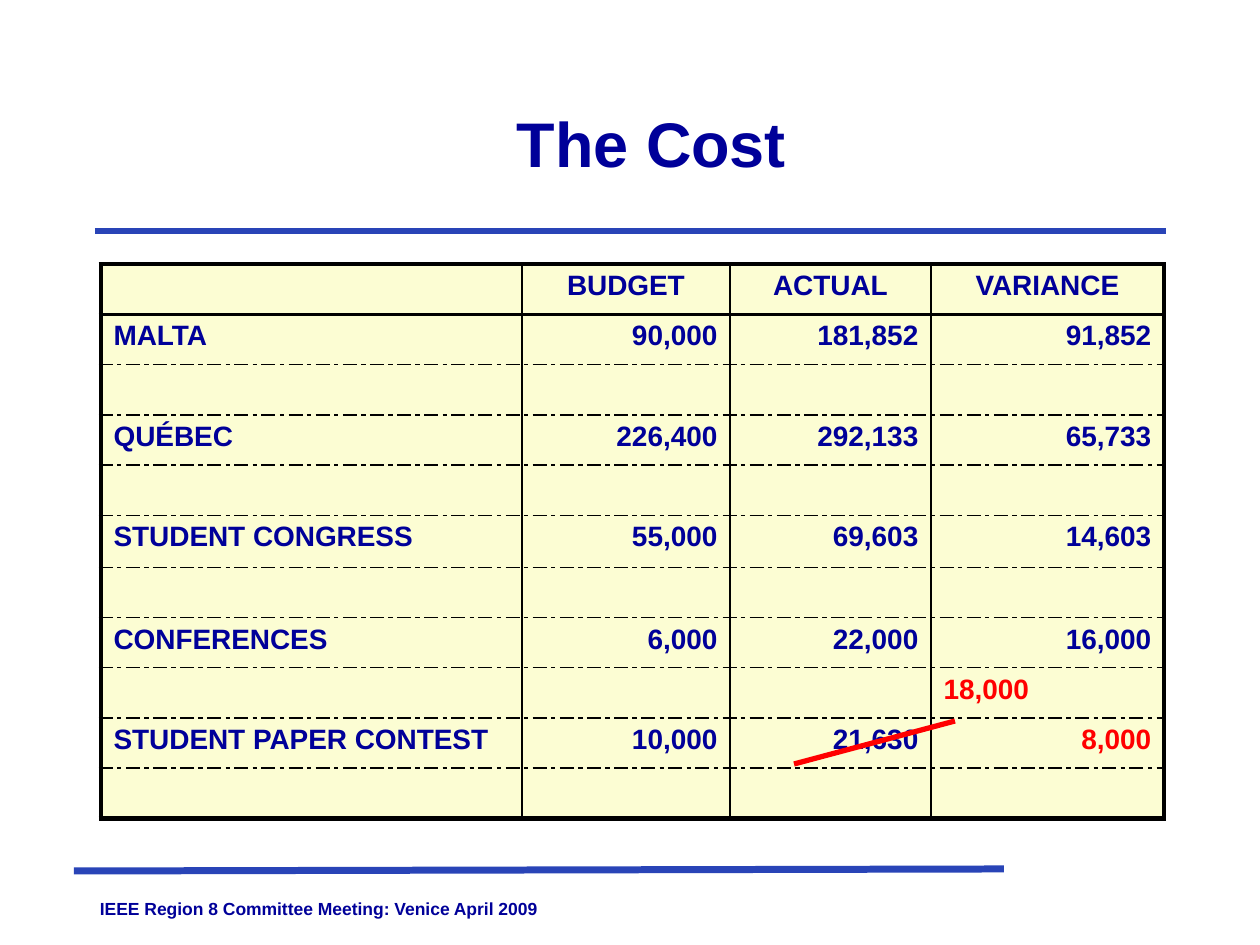
"""Build the cost slide: budget, actual and variance for each activity."""
import pptx
import pptx.util
import pptx.dml.color
import pptx.enum.shapes
import pptx.enum.text
import pptx.oxml
import pptx.oxml.ns

SCALE = 914400 / 126
COLORS = {"navy": "000099", "rule": "2944B7", "cream": "FCFDD3", "red": "FF0000", "black": "000000"}
ALIGN = pptx.enum.text.PP_ALIGN
MIDDLE = pptx.enum.text.MSO_ANCHOR.MIDDLE


def px(*lengths):
    return [pptx.util.Emu(round(length * SCALE)) for length in lengths]


def write(frame, text, size, align, color="navy"):
    paragraph = frame.paragraphs[0]
    paragraph.alignment = align
    run = paragraph.add_run()
    run.text = text
    for name, value in {"name": "Arial", "size": pptx.util.Pt(size), "bold": True}.items():
        setattr(run.font, name, value)
    run.font.color.rgb = pptx.dml.color.RGBColor.from_string(COLORS[color])


deck = pptx.Presentation()
deck.slide_width, deck.slide_height = px(1260, 945)
slide = deck.slides.add_slide(deck.slide_layouts[5])

title = slide.shapes.title
footer = slide.shapes.add_textbox(*px(25, 872, 587, 73))
for name, value in zip(("left", "top", "width", "height"), px(116, 63, 1071, 158)):
    setattr(title, name, value)
for part, text, size in (
    (title, "The Cost", 36),
    (footer, "IEEE Region 8 Committee Meeting: Venice April 2009", 10),
):
    part.text_frame.word_wrap = True
    part.text_frame.vertical_anchor = MIDDLE
    write(part.text_frame, text, size, ALIGN.CENTER)

costs = [
    ["", "BUDGET", "ACTUAL", "VARIANCE"],
    ["MALTA", "90,000", "181,852", "91,852"],
    [""] * 4,
    ["QUÉBEC", "226,400", "292,133", "65,733"],
    [""] * 4,
    ["STUDENT CONGRESS", "55,000", "69,603", "14,603"],
    [""] * 4,
    ["CONFERENCES", "6,000", "22,000", "16,000"],
    ["", "", "", "18,000"],
    ["STUDENT PAPER CONTEST", "10,000", "21,630", "8,000"],
    [""] * 4,
]
widths = [421, 208, 201, 233]
heights = [50] * 5 + [52] + [50] * 5
last_row, last_column = len(heights) - 1, len(widths) - 1
cost_table = slide.shapes.add_table(
    len(heights), len(widths), *px(101, 264, sum(widths), sum(heights))
).table
cost_table.first_row = cost_table.horz_banding = False
for column, width in zip(cost_table.columns, px(*widths)):
    column.width = width
for row, height in zip(cost_table.rows, px(*heights)):
    row.height = height

for r, row_values in enumerate(costs):
    for c, value in enumerate(row_values):
        cell = cost_table.cell(r, c)
        cell.fill.solid()
        cell.fill.fore_color.rgb = pptx.dml.color.RGBColor.from_string(COLORS["cream"])
        if value:
            align = ALIGN.CENTER if r == 0 else ALIGN.LEFT if c == 0 or r == 8 else ALIGN.RIGHT
            write(cell.text_frame, value, 16, align, "red" if r in (8, 9) and c == 3 else "navy")
        borders = {
            "lnL": (3 if c == 0 else 1, "solid"),
            "lnR": (3 if c == last_column else 1, "solid"),
            "lnT": (2.25, "solid") if r <= 1 else (1, "sysDashDot"),
            "lnB": (2.25, "solid") if r == 0 else (3, "solid") if r == last_row else (1, "sysDashDot"),
        }
        properties = cell._tc.get_or_add_tcPr()
        for place, (side, (weight, dash)) in enumerate(borders.items()):
            properties.insert(place, pptx.oxml.parse_xml(
                f'<a:{side} {pptx.oxml.ns.nsdecls("a")} w="{pptx.util.Pt(weight)}">'
                f'<a:solidFill><a:srgbClr val="{COLORS["black"]}"/></a:solidFill>'
                f'<a:prstDash val="{dash}"/></a:{side}>'
            ))

for ends, color, weight in (
    ((74, 871, 1004, 869), "rule", 4),
    ((95, 231, 1166, 231), "rule", 3),
    ((794, 764, 955, 721), "red", 3),
):
    rule = slide.shapes.add_connector(pptx.enum.shapes.MSO_CONNECTOR.STRAIGHT, *px(*ends))
    rule.line.color.rgb = pptx.dml.color.RGBColor.from_string(COLORS[color])
    rule.line.width = pptx.util.Pt(weight)
    rule._element.spPr.append(pptx.oxml.parse_xml(f'<a:effectLst {pptx.oxml.ns.nsdecls("a")}/>'))

deck.save("out.pptx")
